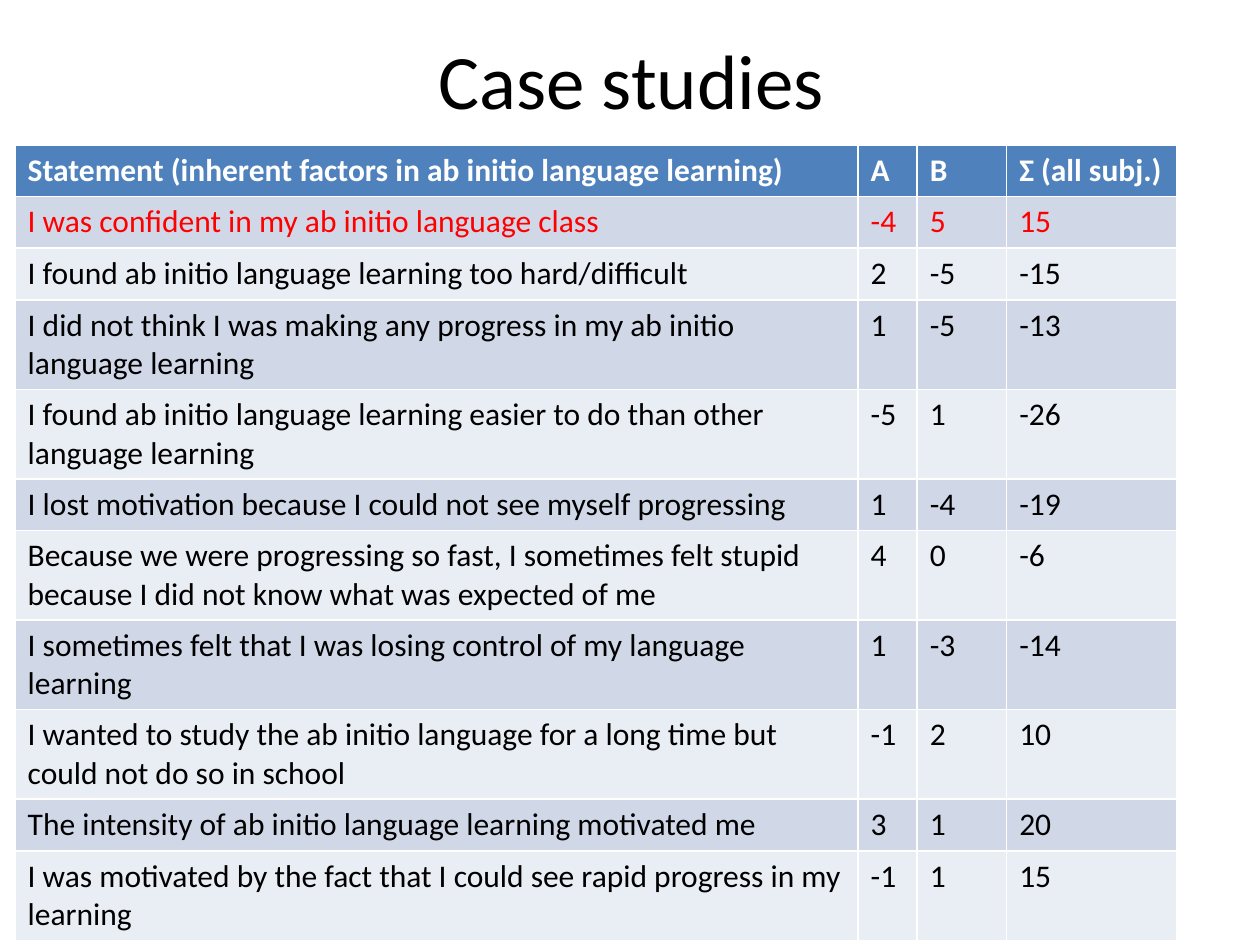
"""Build the case studies slide with its table of statement scores."""
import pptx
import pptx.dml.color
import pptx.enum.text
import pptx.util

Inches = pptx.util.Inches

TITLE = "Case studies"
HEADER = ("Statement (inherent factors in ab initio language learning)", "A", "B", "Ʃ (all subj.)")
SCORES = [
    ("I was confident in my ab initio language class", -4, 5, 15),
    ("I found ab initio language learning too hard/difficult", 2, -5, -15),
    ("I did not think I was making any progress in my ab initio language learning", 1, -5, -13),
    ("I found ab initio language learning easier to do than other language learning", -5, 1, -26),
    ("I lost motivation because I could not see myself progressing", 1, -4, -19),
    ("Because we were progressing so fast, I sometimes felt stupid because I did not know "
     "what was expected of me", 4, 0, -6),
    ("I sometimes felt that I was losing control of my language learning", 1, -3, -14),
    ("I wanted to study the ab initio language for a long time but could not do so in school",
     -1, 2, 10),
    ("The intensity of ab initio language learning motivated me", 3, 1, 20),
    ("I was motivated by the fact that I could see rapid progress in my learning", -1, 1, 15),
]
HIGHLIGHTED_ROW = 1
COLUMN_WIDTHS = (6.69, 0.47, 0.71, 1.35)
ROW_HEIGHT = 0.41
HEADER_FILL = "4F81BD"
BAND_FILLS = ("E9EDF4", "D0D8E8")


def rgb(value):
    """Return the colour for a hex string."""
    return pptx.dml.color.RGBColor.from_string(value)


def write_text(text_frame, text, size=18, color="000000", bold=False, align=None):
    """Write one formatted paragraph into a text frame."""
    paragraph = text_frame.paragraphs[0]
    paragraph.alignment = align
    run = paragraph.add_run()
    run.text = text
    run.font.name = "Calibri"
    run.font.size = pptx.util.Pt(size)
    run.font.bold = bold
    run.font.color.rgb = rgb(color)


def add_title(slide):
    """Place and fill the title placeholder."""
    title = slide.shapes.title
    title.left, title.top, title.width, title.height = map(Inches, (0.51, 0, 9, 1.25))
    title.text_frame.vertical_anchor = pptx.enum.text.MSO_ANCHOR.MIDDLE
    write_text(title.text_frame, TITLE, size=44, align=pptx.enum.text.PP_ALIGN.CENTER)


def row_style(row_index):
    """Return the fill, text colour and weight of a table row."""
    if row_index == 0:
        return HEADER_FILL, "FFFFFF", True
    color = "FF0000" if row_index == HIGHLIGHTED_ROW else "000000"
    return BAND_FILLS[row_index % 2], color, False


def add_score_table(slide):
    """Add the banded table of statements and scores."""
    rows = [HEADER, *SCORES]
    table = slide.shapes.add_table(
        len(rows), len(HEADER), Inches(0.12), Inches(1.15),
        Inches(sum(COLUMN_WIDTHS)), Inches(ROW_HEIGHT * len(rows))).table
    for column, width in zip(table.columns, COLUMN_WIDTHS):
        column.width = Inches(width)
    for row_index, values in enumerate(rows):
        table.rows[row_index].height = Inches(ROW_HEIGHT)
        fill, color, bold = row_style(row_index)
        for column_index, value in enumerate(values):
            cell = table.cell(row_index, column_index)
            cell.fill.solid()
            cell.fill.fore_color.rgb = rgb(fill)
            write_text(cell.text_frame, str(value), color=color, bold=bold)


def main():
    """Create the presentation and save it."""
    presentation = pptx.Presentation()
    presentation.slide_width, presentation.slide_height = Inches(10), Inches(7.5)
    slide = presentation.slides.add_slide(presentation.slide_layouts[5])
    add_title(slide)
    add_score_table(slide)
    presentation.save("out.pptx")


if __name__ == "__main__":
    main()
